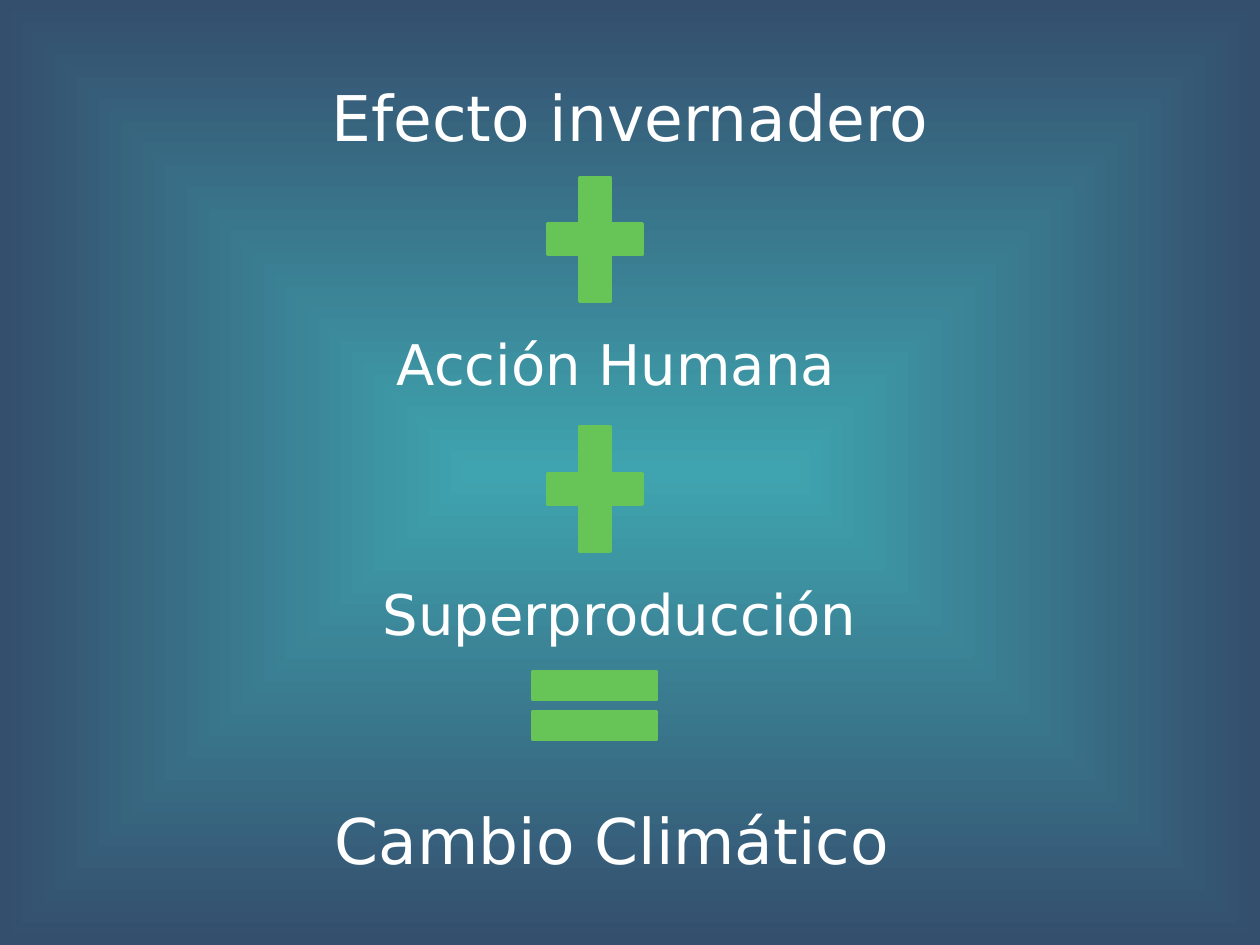
from dataclasses import dataclass

from lxml import etree
from pptx import Presentation
from pptx.dml.color import RGBColor
from pptx.enum import shapes, text
from pptx.oxml.ns import qn
from pptx.util import Inches, Pt


@dataclass(frozen=True)
class Theme:
    font: str = "DejaVu Sans"
    white: RGBColor = RGBColor(0xFF, 0xFF, 0xFF)
    green: RGBColor = RGBColor(0x67, 0xC5, 0x57)
    teal: RGBColor = RGBColor(0x3F, 0xA4, 0xAF)
    navy: RGBColor = RGBColor(0x34, 0x4E, 0x6D)
    large: int = 36
    small: int = 32


@dataclass(frozen=True)
class Box:
    left: float
    top: float
    width: float
    height: float

    def place(self) -> tuple:
        return tuple(Inches(n) for n in (self.left, self.top, self.width, self.height))


@dataclass(frozen=True)
class Term:
    words: str
    box: Box
    size: int
    align: text.PP_ALIGN


@dataclass(frozen=True)
class Sign:
    kind: shapes.MSO_SHAPE
    box: Box


THEME = Theme()
LEFT, MID = text.PP_ALIGN.LEFT, text.PP_ALIGN.CENTER
PLUS, EQUAL = shapes.MSO_SHAPE.MATH_PLUS, shapes.MSO_SHAPE.MATH_EQUAL

TITLE = Term("Efecto invernadero", Box(0.5, 0.3, 9, 1.25), THEME.large, MID)
TERMS = [
    Term("Acción Humana", Box(2.4, 2.57, 4.98, 0.64), THEME.small, MID),
    Term("Superproducción", Box(2.94, 4.55, 4.41, 0.64), THEME.small, LEFT),
    Term("Cambio Climático", Box(2.56, 6.31, 5.53, 0.71), THEME.large, LEFT),
]
SIGNS = [
    Sign(PLUS, Box(4.21, 1.23, 1.02, 1.34)),
    Sign(PLUS, Box(4.21, 3.21, 1.02, 1.34)),
    Sign(EQUAL, Box(4.05, 5.15, 1.34, 0.9)),
]


def paint(slide) -> None:
    """Fill the background from a teal centre to navy edges."""
    fill = slide.background.fill
    fill.gradient()
    for stop, color, spot in zip(fill.gradient_stops, (THEME.teal, THEME.navy), (0, 1)):
        stop.color.rgb = color
        stop.position = spot
    grad = slide.element.find(".//" + qn("a:gradFill"))
    grad.remove(grad.find(qn("a:lin")))
    route = etree.SubElement(grad, qn("a:path"), path="shape")
    etree.SubElement(route, qn("a:fillToRect"), l="50000", t="50000", r="50000", b="50000")


def write(frame, term: Term) -> None:
    """Put the words of a term in a text frame."""
    frame.word_wrap = True
    para = frame.paragraphs[0]
    para.text = term.words
    para.alignment = term.align
    para.font.name = THEME.font
    para.font.size = Pt(term.size)
    para.font.color.rgb = THEME.white


def head(slide, term: Term) -> None:
    title = slide.shapes.title
    title.left, title.top, title.width, title.height = term.box.place()
    write(title.text_frame, term)
    title.text_frame.vertical_anchor = text.MSO_ANCHOR.MIDDLE


def label(slide, term: Term) -> None:
    frame = slide.shapes.add_textbox(*term.box.place()).text_frame
    write(frame, term)
    frame.auto_size = text.MSO_AUTO_SIZE.SHAPE_TO_FIT_TEXT


def draw(slide, sign: Sign) -> None:
    shape = slide.shapes.add_shape(sign.kind, *sign.box.place())
    shape.shadow.inherit = False
    shape.fill.solid()
    shape.fill.fore_color.rgb = THEME.green
    shape.line.color.rgb = THEME.green
    shape.line.width = Pt(2)


def main() -> None:
    deck = Presentation()
    deck.slide_width, deck.slide_height = Inches(10), Inches(7.5)
    slide = deck.slides.add_slide(deck.slide_layouts[5])  # title only
    paint(slide)

    # The sum: terms joined by signs
    head(slide, TITLE)
    for term in TERMS:
        label(slide, term)
    for sign in SIGNS:
        draw(slide, sign)

    deck.save("out.pptx")


if __name__ == "__main__":
    main()
